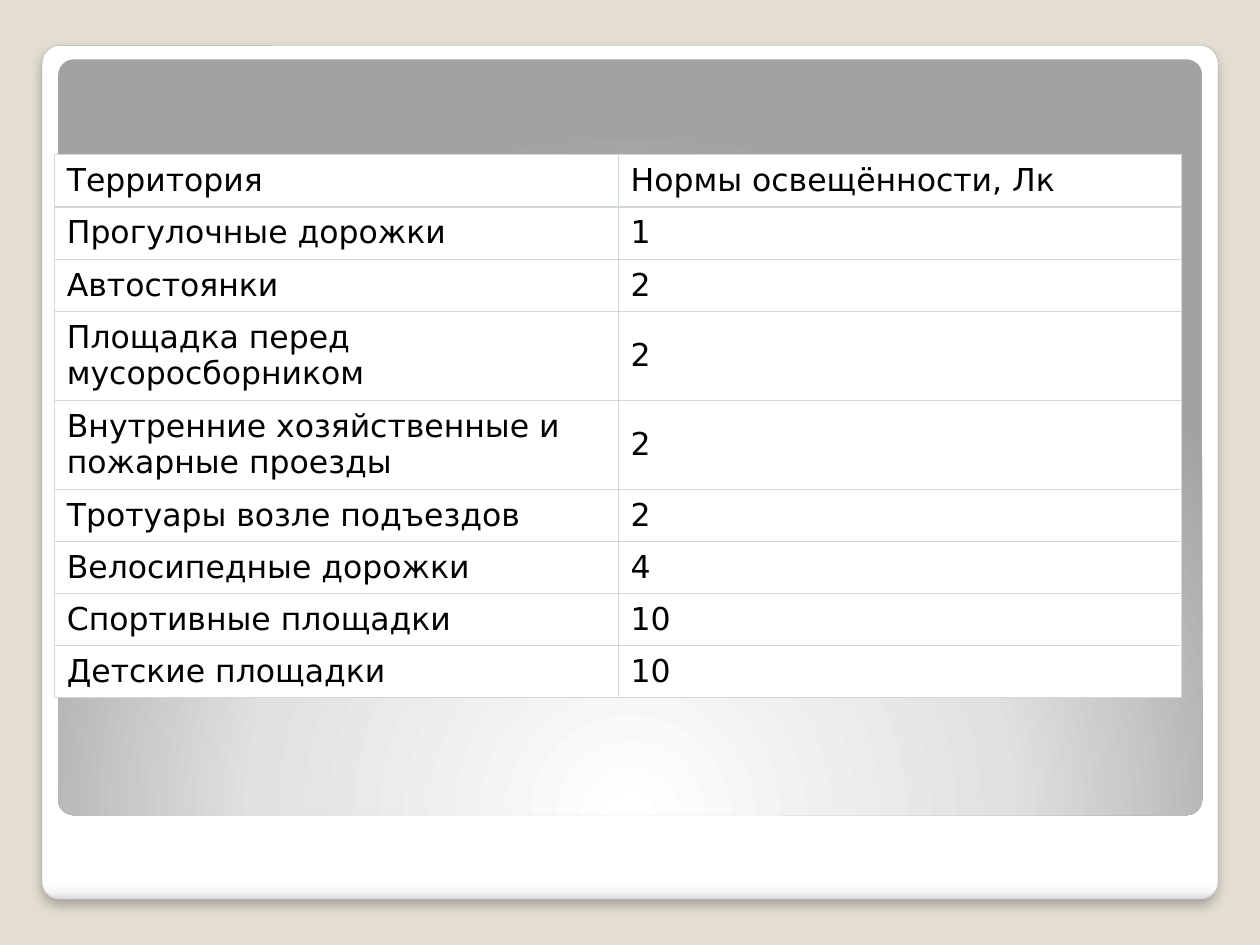
from pptx import Presentation
from pptx.dml.color import RGBColor
from pptx.enum.shapes import MSO_SHAPE
from pptx.enum.text import MSO_ANCHOR
from pptx.oxml import parse_xml
from pptx.oxml.ns import nsdecls
from pptx.util import Pt

FONT = "DejaVu Sans"
SINGLE_ROW, DOUBLE_ROW = 29.8, 50.8
LIGHTING_NORMS = [
    ("Территория", "Нормы освещённости, Лк", SINGLE_ROW),
    ("Прогулочные дорожки", "1", SINGLE_ROW),
    ("Автостоянки", "2", SINGLE_ROW),
    ("Площадка перед мусоросборником", "2", DOUBLE_ROW),
    ("Внутренние хозяйственные и пожарные проезды", "2", DOUBLE_ROW),
    ("Тротуары возле подъездов", "2", SINGLE_ROW),
    ("Велосипедные дорожки", "4", SINGLE_ROW),
    ("Спортивные площадки", "10", SINGLE_ROW),
    ("Детские площадки", "10", SINGLE_ROW),
]


def color(value):
    """Return the colour for a hex string."""
    return RGBColor.from_string(value)


def add_panel(page, left, top, width, height, stops, direction):
    """Add a rounded panel with a gradient of the given stops and direction."""
    panel = page.shapes.add_shape(
        MSO_SHAPE.ROUNDED_RECTANGLE, Pt(left), Pt(top), Pt(width), Pt(height)
    )
    panel.adjustments[0] = 0.021
    panel.shadow.inherit = False
    panel.line.fill.background()
    stop_list = "".join(
        f'<a:gs pos="{place * 1000}"><a:srgbClr val="{value}"/></a:gs>'
        for place, value in stops
    )
    properties = panel.element.spPr
    properties.insert(2, parse_xml(
        f'<a:gradFill {nsdecls("a")} rotWithShape="1">'
        f"<a:gsLst>{stop_list}</a:gsLst>{direction}</a:gradFill>"
    ))
    return panel


def add_frame(page, left, top, width, height):
    """Add the white outer frame with its shadow and the grey panel in it."""
    frame = add_panel(
        page, left, top, width, height,
        [(0, "FFFFFF"), (98, "FFFFFF"), (99, "F7F7F7"), (100, "DADADA")],
        '<a:lin ang="5400000" scaled="0"/>',
    )
    frame.line.color.rgb = color("A4A4A4")
    frame.line.width = Pt(0.16)
    frame.element.spPr[-1].append(parse_xml(
        f'<a:outerShdw {nsdecls("a")} blurRad="{Pt(6)}" dist="{Pt(4)}" '
        'dir="5400000" algn="tl" rotWithShape="0"><a:srgbClr val="000000">'
        '<a:alpha val="25000"/></a:srgbClr></a:outerShdw>'
    ))
    add_panel(
        page, left + 9.2, top + 7.9, width - 18.2, 432,
        [(0, "FFFFFF"), (55, "E1E1E1"), (100, "A2A2A2")],
        '<a:path path="circle"><a:fillToRect l="50000" t="175000" '
        'r="50000" b="-75000"/></a:path>',
    )


def style_cell(cell, text):
    """Fill one table cell with text and draw its borders."""
    cell.text = text
    cell.vertical_anchor = MSO_ANCHOR.MIDDLE
    cell.margin_left = cell.margin_right = Pt(7.2)
    cell.margin_top = cell.margin_bottom = Pt(4.32)
    cell.fill.solid()
    cell.fill.fore_color.rgb = color("FFFFFF")
    font = cell.text_frame.paragraphs[0].font
    font.name, font.size, font.bold = FONT, Pt(18), False
    font.color.rgb = color("000000")
    properties = cell._tc.get_or_add_tcPr()
    for index, side in enumerate(("lnL", "lnR", "lnT", "lnB")):
        properties.insert(index, parse_xml(
            f'<a:{side} {nsdecls("a")} w="{Pt(0.75)}"><a:solidFill>'
            f'<a:srgbClr val="D0D8DB"/></a:solidFill></a:{side}>'
        ))


def add_norms_table(page, left, top, width):
    """Add the table of lighting norms by territory."""
    height = sum(row_height for _, _, row_height in LIGHTING_NORMS)
    table = page.shapes.add_table(
        len(LIGHTING_NORMS), 2, Pt(left), Pt(top), Pt(width), Pt(height)
    ).table
    table.first_row = table.horz_banding = False
    for row, (territory, norm, row_height) in zip(table.rows, LIGHTING_NORMS):
        row.height = Pt(row_height)
        for cell, text in zip(row.cells, (territory, norm)):
            style_cell(cell, text)


def main():
    """Build and save the slide."""
    deck = Presentation()
    deck.slide_width, deck.slide_height = Pt(720), Pt(540)
    page = deck.slides.add_slide(deck.slide_layouts[6])
    page.background.fill.solid()
    page.background.fill.fore_color.rgb = color("E3DED1")
    add_frame(page, 24, 26, 672, 488)
    add_norms_table(page, 31, 88.5, 644.4)
    deck.save("out.pptx")


if __name__ == "__main__":
    main()
